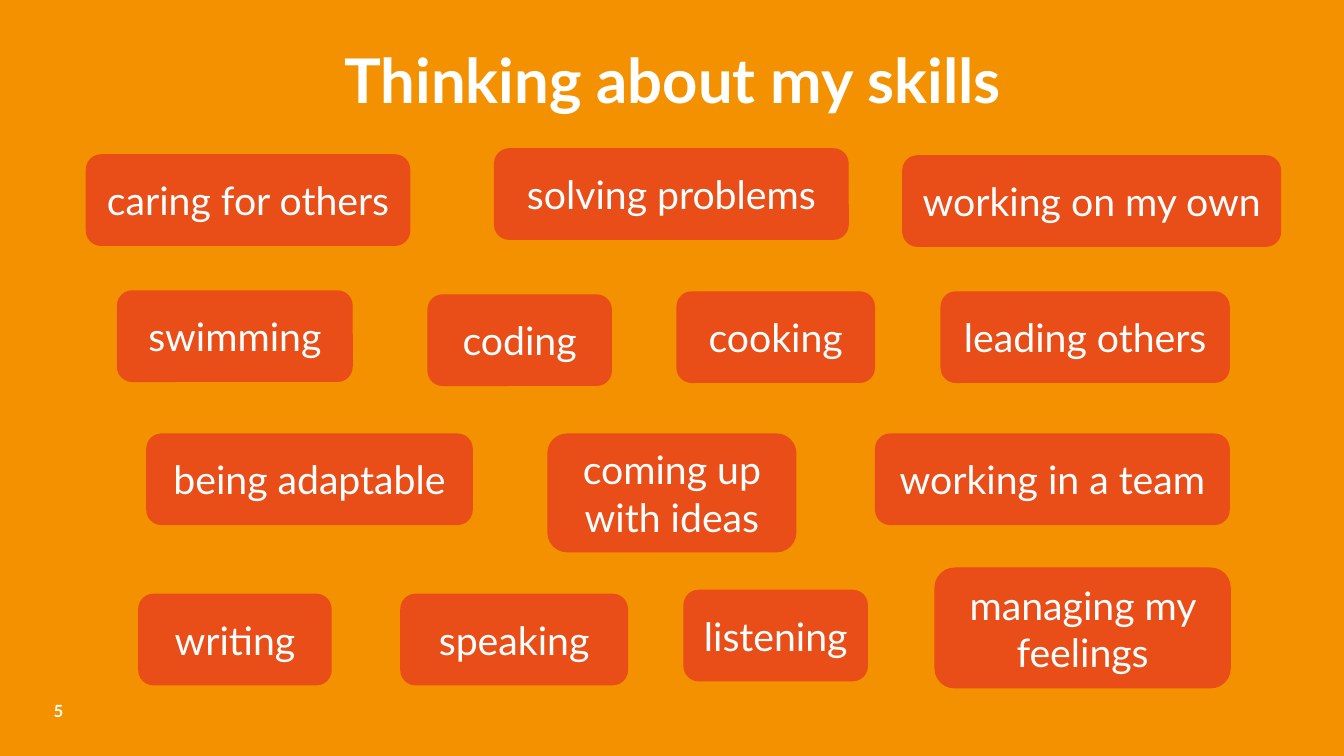
from dataclasses import dataclass

from pptx import Presentation
from pptx.dml.color import RGBColor
from pptx.enum.shapes import MSO_SHAPE
from pptx.enum.text import MSO_ANCHOR, MSO_AUTO_SIZE, PP_ALIGN
from pptx.slide import Slide
from pptx.text.text import TextFrame
from pptx.util import Inches, Pt

ORANGE = RGBColor(0xF3, 0x91, 0x00)
RED = RGBColor(0xE9, 0x4D, 0x18)
WHITE = RGBColor(0xFF, 0xFF, 0xFF)
FONT = "Lato"

ROUNDED = MSO_SHAPE.ROUNDED_RECTANGLE
TOP, MIDDLE, BOTTOM = MSO_ANCHOR.TOP, MSO_ANCHOR.MIDDLE, MSO_ANCHOR.BOTTOM
LEFT, CENTER = PP_ALIGN.LEFT, PP_ALIGN.CENTER
GROW = MSO_AUTO_SIZE.SHAPE_TO_FIT_TEXT

SLIDE_WIDTH, SLIDE_HEIGHT = Inches(13.33), Inches(7.5)
TITLE_LAYOUT = 5
ONE_LINE = 12.13


@dataclass(frozen=True)
class Box:
    """A rectangle in percent of the slide's width and height."""
    left: float
    top: float
    width: float
    height: float = ONE_LINE

    def lengths(self) -> tuple[int, int, int, int]:
        return (round(SLIDE_WIDTH * self.left / 100),
                round(SLIDE_HEIGHT * self.top / 100),
                round(SLIDE_WIDTH * self.width / 100),
                round(SLIDE_HEIGHT * self.height / 100))


@dataclass(frozen=True)
class Skill:
    text: str
    box: Box


TITLE_BOX = Box(19.2, 4.93, 61.73, 11.2)
NUMBER_BOX = Box(3.98, 91.07, 5.48, 4.27)

SKILLS = [
    Skill("caring for others", Box(6.38, 20.4, 24.15)),
    Skill("solving problems", Box(36.75, 19.6, 26.4)),
    Skill("working on my own", Box(67.13, 20.53, 28.2)),
    Skill("swimming", Box(8.7, 38.4, 17.55)),
    Skill("coding", Box(31.8, 38.93, 13.73)),
    Skill("cooking", Box(50.33, 38.53, 14.78)),
    Skill("leading others", Box(69.98, 38.53, 21.53)),
    Skill("being adaptable", Box(10.88, 57.33, 24.3)),
    Skill("coming up with ideas", Box(40.73, 57.33, 18.53, 15.73)),
    Skill("working in a team", Box(65.1, 57.33, 26.4)),
    Skill("writing", Box(10.28, 78.53, 14.4)),
    Skill("speaking", Box(29.78, 78.53, 16.95)),
    Skill("listening", Box(50.85, 78, 13.73)),
    Skill("managing my feelings", Box(69.53, 75.07, 22.05, 16)),
]


def write(frame: TextFrame, text: str, size: int, bold: bool,
          alignment: PP_ALIGN, anchor: MSO_ANCHOR) -> None:
    frame.word_wrap = True
    frame.vertical_anchor = anchor
    paragraph = frame.paragraphs[0]
    paragraph.alignment = alignment
    run = paragraph.add_run()
    run.text = text
    run.font.name = FONT
    run.font.size = Pt(size)
    run.font.bold = bold
    run.font.color.rgb = WHITE


def add_title(slide: Slide, text: str) -> None:
    title = slide.shapes.title
    title.left, title.top, title.width, title.height = TITLE_BOX.lengths()
    write(title.text_frame, text, 44, True, CENTER, TOP)
    title.text_frame.auto_size = GROW
    title.text_frame.paragraphs[0].space_after = Pt(18)


def add_page_number(slide: Slide, text: str) -> None:
    frame = slide.shapes.add_textbox(*NUMBER_BOX.lengths()).text_frame
    frame.margin_left = frame.margin_right = 0
    frame.margin_top = frame.margin_bottom = 0
    write(frame, text, 12, True, LEFT, BOTTOM)


def add_skill(slide: Slide, skill: Skill) -> None:
    shape = slide.shapes.add_shape(ROUNDED, *skill.box.lengths())
    shape.shadow.inherit = False
    shape.fill.solid()
    shape.fill.fore_color.rgb = RED
    shape.line.fill.background()
    write(shape.text_frame, skill.text, 28, False, CENTER, MIDDLE)


def main() -> None:
    presentation = Presentation()
    presentation.slide_width = SLIDE_WIDTH
    presentation.slide_height = SLIDE_HEIGHT
    slide = presentation.slides.add_slide(presentation.slide_layouts[TITLE_LAYOUT])
    slide.background.fill.solid()
    slide.background.fill.fore_color.rgb = ORANGE
    add_page_number(slide, "5")
    add_title(slide, "Thinking about my skills")
    for skill in SKILLS:
        add_skill(slide, skill)
    presentation.save("out.pptx")


if __name__ == "__main__":
    main()
